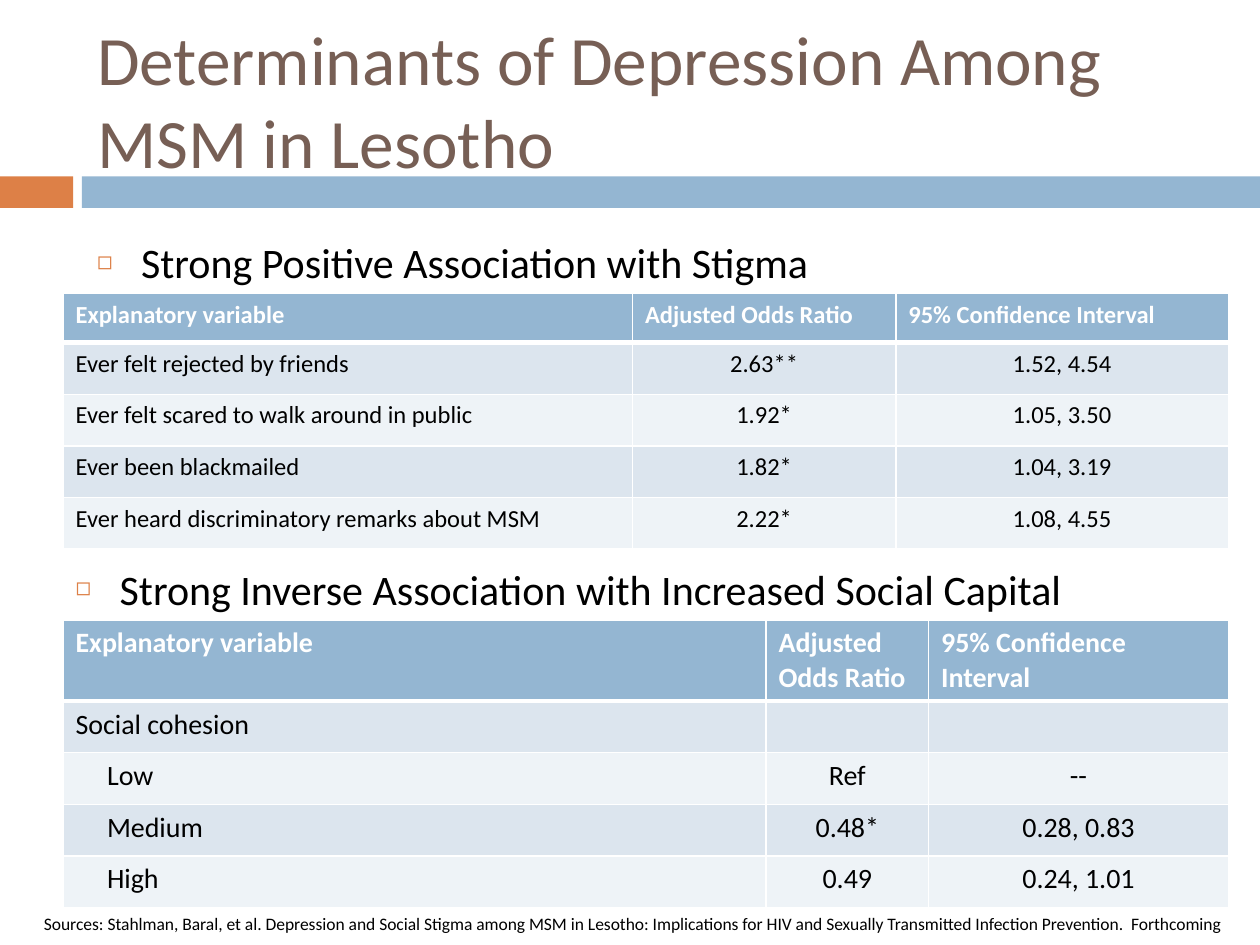
from lxml import etree
from pptx import Presentation
from pptx.dml.color import RGBColor
from pptx.enum.shapes import MSO_SHAPE
from pptx.enum.text import MSO_ANCHOR, MSO_AUTO_SIZE, PP_ALIGN
from pptx.oxml.ns import qn
from pptx.util import Inches, Pt

RECTANGLE = MSO_SHAPE.RECTANGLE
TOP, MIDDLE = MSO_ANCHOR.TOP, MSO_ANCHOR.MIDDLE
NO_AUTOFIT = MSO_AUTO_SIZE.NONE
LEFT, CENTER = PP_ALIGN.LEFT, PP_ALIGN.CENTER

FONT = "Calibri"
COLORS = {
    "title": "775F55", "accent": "DD8047", "header": "94B6D2",
    "odd_row": "DCE5EE", "even_row": "EEF3F7", "text": "000000", "white": "FFFFFF",
}
TWO_CONTENT_LAYOUT = 3
ROW_HEIGHT = 0.41
CHILD_INDENT = 0.25

HEADINGS = ["Explanatory variable", "Adjusted Odds Ratio", "95% Confidence Interval"]
STIGMA_ROWS = [
    ["Ever felt rejected by friends", "2.63**", "1.52, 4.54"],
    ["Ever felt scared to walk around in public", "1.92*", "1.05, 3.50"],
    ["Ever been blackmailed", "1.82*", "1.04, 3.19"],
    ["Ever heard discriminatory remarks about MSM", "2.22*", "1.08, 4.55"],
]
CAPITAL_ROWS = [
    ["Social cohesion", "", ""],
    ["Low", "Ref", "--"],
    ["Medium", "0.48*", "0.28, 0.83"],
    ["High", "0.49", "0.24, 1.01"],
]
COHESION_LEVELS = {"Low", "Medium", "High"}


def color(name):
    return RGBColor.from_string(COLORS[name])


def place(shape, box):
    shape.left, shape.top, shape.width, shape.height = (Inches(value) for value in box)


def write(text_frame, text, size, color_name, bold=False, align=LEFT):
    text_frame.text = text
    paragraph = text_frame.paragraphs[0]
    paragraph.alignment = align
    for run in paragraph.runs:
        run.font.name = FONT
        run.font.size = Pt(size)
        run.font.bold = bold
        run.font.color.rgb = color(color_name)
    return paragraph


def add_band(slide, box, color_name):
    band = slide.shapes.add_shape(RECTANGLE, *(Inches(value) for value in box))
    band.shadow.inherit = False
    band.fill.solid()
    band.fill.fore_color.rgb = color(color_name)
    band.line.fill.background()


def fill_title(title, box, text):
    place(title, box)
    text_frame = title.text_frame
    text_frame.auto_size = NO_AUTOFIT
    text_frame.vertical_anchor = MIDDLE
    write(text_frame, text, 39.6, "title")


def fill_bullet(body, box, text):
    place(body, box)
    text_frame = body.text_frame
    text_frame.auto_size = NO_AUTOFIT
    text_frame.vertical_anchor = TOP
    paragraph = write(text_frame, text, 24, "text")
    paragraph.space_before = Pt(7)
    properties = paragraph._p.get_or_add_pPr()
    properties.set("marL", str(Inches(0.35)))
    properties.set("indent", str(Inches(-0.35)))
    bullet_color = etree.SubElement(properties, qn("a:buClr"))
    etree.SubElement(bullet_color, qn("a:srgbClr"), val=COLORS["accent"])
    etree.SubElement(properties, qn("a:buSzPct"), val="60000")
    etree.SubElement(properties, qn("a:buFont"), typeface=FONT)
    etree.SubElement(properties, qn("a:buChar"), char="◻")


def set_borders(cell, bottom_width):
    properties = cell._tc.get_or_add_tcPr()
    for side, width in (("L", 1), ("R", 1), ("T", 1), ("B", bottom_width)):
        line = etree.SubElement(properties, qn(f"a:ln{side}"), w=str(Pt(width)))
        line_fill = etree.SubElement(line, qn("a:solidFill"))
        etree.SubElement(line_fill, qn("a:srgbClr"), val=COLORS["white"])


def add_odds_table(slide, box, column_widths, rows, size, child_labels=()):
    all_rows = [HEADINGS] + rows
    frame = slide.shapes.add_table(
        len(all_rows), len(HEADINGS), *(Inches(value) for value in box))
    table = frame.table
    for column, width in zip(table.columns, column_widths):
        column.width = Inches(width)
    # The header takes the height the data rows leave
    for row in table.rows:
        row.height = Inches(ROW_HEIGHT)
    table.rows[0].height = Inches(box[3] - ROW_HEIGHT * len(rows))

    for row_index, values in enumerate(all_rows):
        is_header = row_index == 0
        fill_name = "header" if is_header else "odd_row" if row_index % 2 else "even_row"
        for column_index, value in enumerate(values):
            cell = table.cell(row_index, column_index)
            # A thick rule under the header continues on the first data row
            set_borders(cell, 3 if is_header else 1)
            cell.fill.solid()
            cell.fill.fore_color.rgb = color(fill_name)
            if value in child_labels:
                cell.margin_left = Inches(0.1 + CHILD_INDENT)
            write(cell.text_frame, value, size, "white" if is_header else "text",
                  bold=is_header,
                  align=CENTER if column_index and not is_header else LEFT)


def add_source(slide, box, text):
    source = slide.shapes.add_textbox(*(Inches(value) for value in box))
    source.text_frame.word_wrap = True
    write(source.text_frame, text, 10, "text")


def main():
    presentation = Presentation()
    presentation.slide_width = Inches(10)
    presentation.slide_height = Inches(7.5)
    slide = presentation.slides.add_slide(presentation.slide_layouts[TWO_CONTENT_LAYOUT])
    title, stigma, capital = slide.placeholders

    # Heading and coloured bands
    add_band(slide, (0, 1.4, 0.58, 0.25), "accent")
    add_band(slide, (0.65, 1.4, 9.35, 0.25), "header")
    fill_title(title, (0.67, 0.25, 8.92, 1.08),
               "Determinants of Depression Among MSM in Lesotho")

    # Stigma
    fill_bullet(stigma, (0.67, 1.83, 8.75, 0.5), "Strong Positive Association with Stigma")
    add_odds_table(slide, (0.5, 2.33, 9.25, 2.03), (4.52, 2.09, 2.64), STIGMA_ROWS, 14)

    # Social capital
    fill_bullet(capital, (0.5, 4.42, 8.75, 0.67),
                "Strong Inverse Association with Increased Social Capital")
    add_odds_table(slide, (0.5, 4.92, 9.25, 2.26), (5.58, 1.29, 2.38), CAPITAL_ROWS, 16,
                   COHESION_LEVELS)

    # Source line
    add_source(slide, (0.25, 7.2, 9.58, 0.27),
               "Sources: Stahlman, Baral, et al. Depression and Social Stigma among MSM in "
               "Lesotho: Implications for HIV and Sexually Transmitted Infection Prevention.  "
               "Forthcoming")

    presentation.save("out.pptx")


if __name__ == "__main__":
    main()
